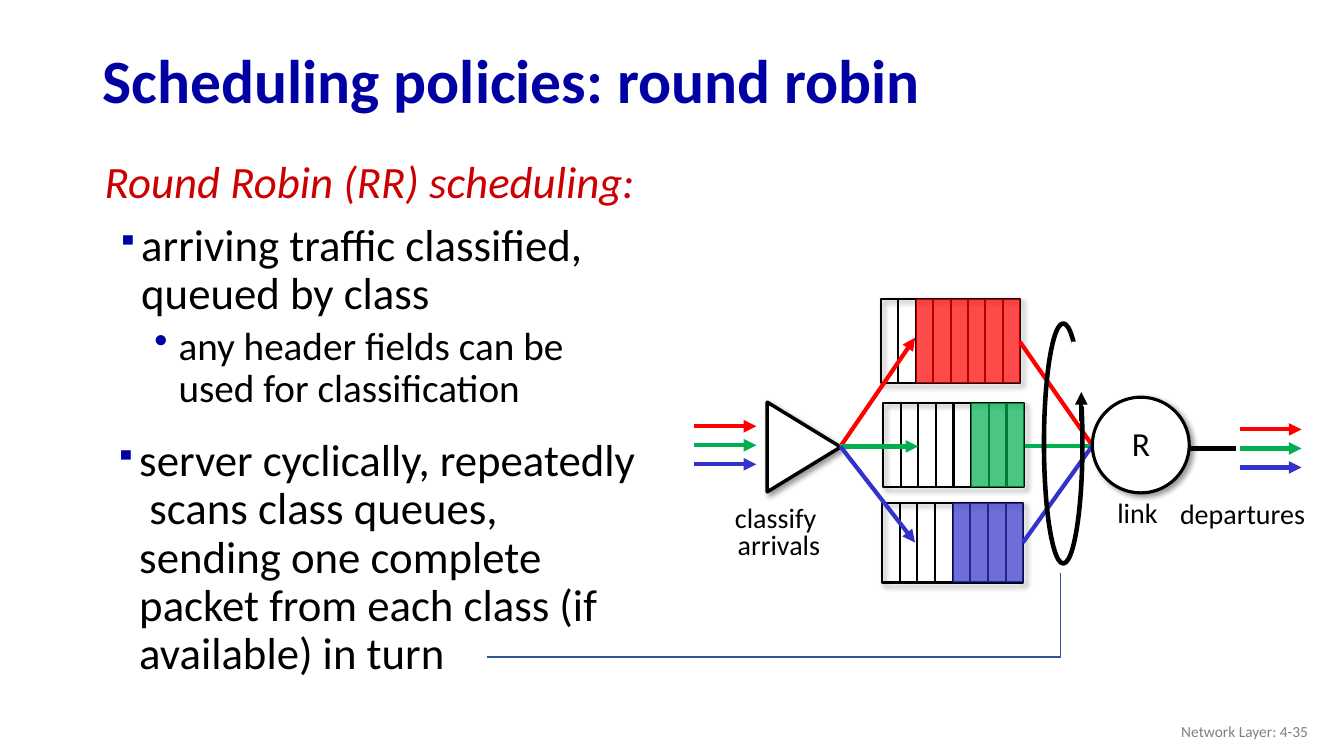
from dataclasses import dataclass

from lxml.etree import SubElement
from pptx import Presentation
from pptx.dml.color import RGBColor
from pptx.enum.shapes import MSO_CONNECTOR, MSO_SHAPE
from pptx.enum.text import MSO_ANCHOR, PP_ALIGN
from pptx.oxml.ns import qn
from pptx.util import Cm, Pt

BLACK, WHITE, NAVY = "000000", "FFFFFF", "0000A3"
Point = tuple[float, float]
Box = tuple[float, float, float, float]


@dataclass
class Queue:
    color: str
    box: Box
    filled: int   # occupied slots, counted from the right
    tip: Point    # end of the arrow from the classifier
    out: Point    # start of the line to the server


@dataclass
class Label:
    text: str
    box: Box
    size: int = 20


QUEUES = [
    Queue("FF0000", (22.2, 7.54, 3.51, 2.11), 6, (23.06, 8.51), (25.7, 8.61)),
    Queue("00B050", (22.25, 10.16, 3.56, 2.11), 3, (23.14, 11.25), (25.83, 11.23)),
    Queue("3333CC", (22.23, 12.67, 3.56, 2.01), 4, (23.06, 13.67), (25.78, 13.67)),
]
LABELS = [
    Label("classify \narrivals", (18.26, 12.65, 2.74, 1.65)),
    Label("departures", (29.46, 12.55, 3.71, 0.97)),
    Label("link", (27.89, 12.52, 1.55, 0.97)),
    Label("R", (28.27, 10.74, 0.97, 1.09), 24),
]
SLOTS = 8
FLOWS = [(17.5, 10.74), (31.24, 10.82)]  # start of the top arrow
FORK, JOIN = (21.18, 11.25), (27.53, 11.23)

deck = Presentation()
deck.slide_width, deck.slide_height = Cm(33.87), Cm(19.05)
slide = deck.slides.add_slide(deck.slide_layouts[6])
shapes = slide.shapes


def rgb(code: str) -> RGBColor:
    return RGBColor.from_string(code)


def frame(box: Box, wrap: bool = True, anchor=MSO_ANCHOR.TOP):
    area = shapes.add_textbox(*map(Cm, box)).text_frame
    area.word_wrap = wrap
    area.vertical_anchor = anchor
    return area


def write(area, text: str, *, size: int = 32, color: str = BLACK,
          bold: bool = False, italic: bool = False, align=PP_ALIGN.LEFT,
          space: float = 0.9, before: int = 0, left: float = 0,
          hang: float = 0, mark: str = "", scale: int = 100) -> None:
    for line in text.split("\n"):
        first = area.paragraphs[0]
        para = area.add_paragraph() if first.runs else first
        para.alignment, para.line_spacing = align, space
        para.space_before = Pt(before)
        run = para.add_run()
        run.text = line
        font = run.font
        font.name, font.size = "Calibri", Pt(size)
        font.bold, font.italic = bold, italic
        font.color.rgb = rgb(color)
        props = para._p.get_or_add_pPr()
        props.set("marL", str(Cm(left)))
        props.set("indent", str(Cm(-hang)))
        if mark:
            tint = SubElement(props, qn("a:buClr"))
            SubElement(tint, qn("a:srgbClr"), val=NAVY)
            SubElement(props, qn("a:buSzPct"), val=str(scale * 1000))
            SubElement(props, qn("a:buChar"), char=mark)


def style(shape, fill: str = "", width: float = 0, shadow: bool = False,
          alpha: int = 100, ink: str = BLACK):
    shape.shadow.inherit = False
    if fill:
        shape.fill.solid()
        shape.fill.fore_color.rgb = rgb(fill)
    else:
        shape.fill.background()
    if width:
        shape.line.color.rgb = rgb(ink)
        shape.line.width = Pt(width)
    else:
        shape.line.fill.background()
    props = shape._element.spPr
    if alpha < 100:
        tint = props.find(qn("a:solidFill")).find(qn("a:srgbClr"))
        SubElement(tint, qn("a:alpha"), val=str(alpha * 1000))
    if shadow:
        cast = SubElement(props.find(qn("a:effectLst")), qn("a:outerShdw"),
                          blurRad=str(Pt(4)), dist=str(Pt(3)),
                          dir="2700000", algn="tl", rotWithShape="0")
        tint = SubElement(cast, qn("a:srgbClr"), val=BLACK)
        SubElement(tint, qn("a:alpha"), val="40000")
    return shape


def draw(kind, box: Box, **look):
    return style(shapes.add_shape(kind, *map(Cm, box)), **look)


def link(start: Point, end: Point, color: str = BLACK, width: float = 3,
         arrow: bool = False) -> None:
    line = shapes.add_connector(MSO_CONNECTOR.STRAIGHT, *map(Cm, start + end))
    line.line.color.rgb = rgb(color)
    line.line.width = Pt(width)
    if arrow:
        SubElement(line.line._get_or_add_ln(), qn("a:tailEnd"), type="triangle")
    SubElement(line._element.spPr, qn("a:effectLst"))


def store(queue: Queue) -> None:
    left, top, width, height = queue.box
    step = width / SLOTS
    draw(MSO_SHAPE.RECTANGLE, queue.box, width=1.5, shadow=True)
    for slot in range(1, SLOTS):
        x = left + slot * step
        link((x, top), (x, top + height), width=1.5)
    span = queue.filled * step
    draw(MSO_SHAPE.RECTANGLE, (left + width - span, top, span, height),
         fill=queue.color, alpha=71)


# Title and text
write(frame((2.34, 0.86, 29.21, 2.49), anchor=MSO_ANCHOR.MIDDLE),
      "Scheduling policies: round robin", size=44, color=NAVY, bold=True)
body = frame((2.01, 3.91, 14.33, 6.99))
write(body, "Round Robin (RR) scheduling:", color="CC0000", italic=True,
      before=10, left=0.99, hang=0.61)
item = dict(before=10, left=1.3, hang=0.61, mark="▪", scale=65)
write(body, "arriving traffic classified, queued by class", **item)
write(body, "any header fields can be used for classification", size=28,
      before=5, left=2.24, hang=0.61, mark="•")
write(frame((1.96, 10.9, 14.33, 6.53)),
      "server cyclically, repeatedly  scans class queues, sending one "
      "complete packet from each class (if available) in turn", **item)

# Queues and classifier
link((29.87, 11.3), (31.14, 11.3))
for queue in QUEUES:
    store(queue)
wedge = draw(MSO_SHAPE.ISOSCELES_TRIANGLE, (19.13, 10.34, 2.26, 1.85),
             fill=WHITE, width=2.5, shadow=True)
wedge.rotation = 90

# Coloured flows
for row, queue in enumerate(QUEUES):
    for x, top in FLOWS:
        y = top + row * 0.48
        link((x, y), (x + 1.56, y), queue.color, arrow=True)
    link(FORK, queue.tip, queue.color, arrow=True)
    link(queue.out, JOIN, queue.color)

# Server and labels
draw(MSO_SHAPE.OVAL, (27.53, 10.01, 2.44, 2.41),
     fill=WHITE, width=2.25, shadow=True)
for label in LABELS:
    write(frame(label.box, wrap=False), label.text, size=label.size,
          align=PP_ALIGN.CENTER, space=0.8)

# Cyclic scan, opened by a white gap
draw(MSO_SHAPE.OVAL, (26.31, 8.15, 0.97, 6.05), width=3.25)
draw(MSO_SHAPE.RECTANGLE, (27, 8.61, 0.53, 1.63), fill=WHITE)
link((27.25, 10.62), (27.25, 9.88), arrow=True)

# Pointer from the text to the scan
bend = shapes.build_freeform(Cm(12.27), Cm(16.56))
bend.add_line_segments([(Cm(26.72), Cm(16.56)), (Cm(26.72), Cm(14.45))],
                       close=False)
style(bend.convert_to_shape(), width=1, ink="325491")

# Page number
write(frame((25.6, 17.91, 7.62, 1.02), anchor=MSO_ANCHOR.MIDDLE),
      "Network Layer: 4-35", size=11, color="808080",
      align=PP_ALIGN.RIGHT, space=1.0)

deck.save("out.pptx")
